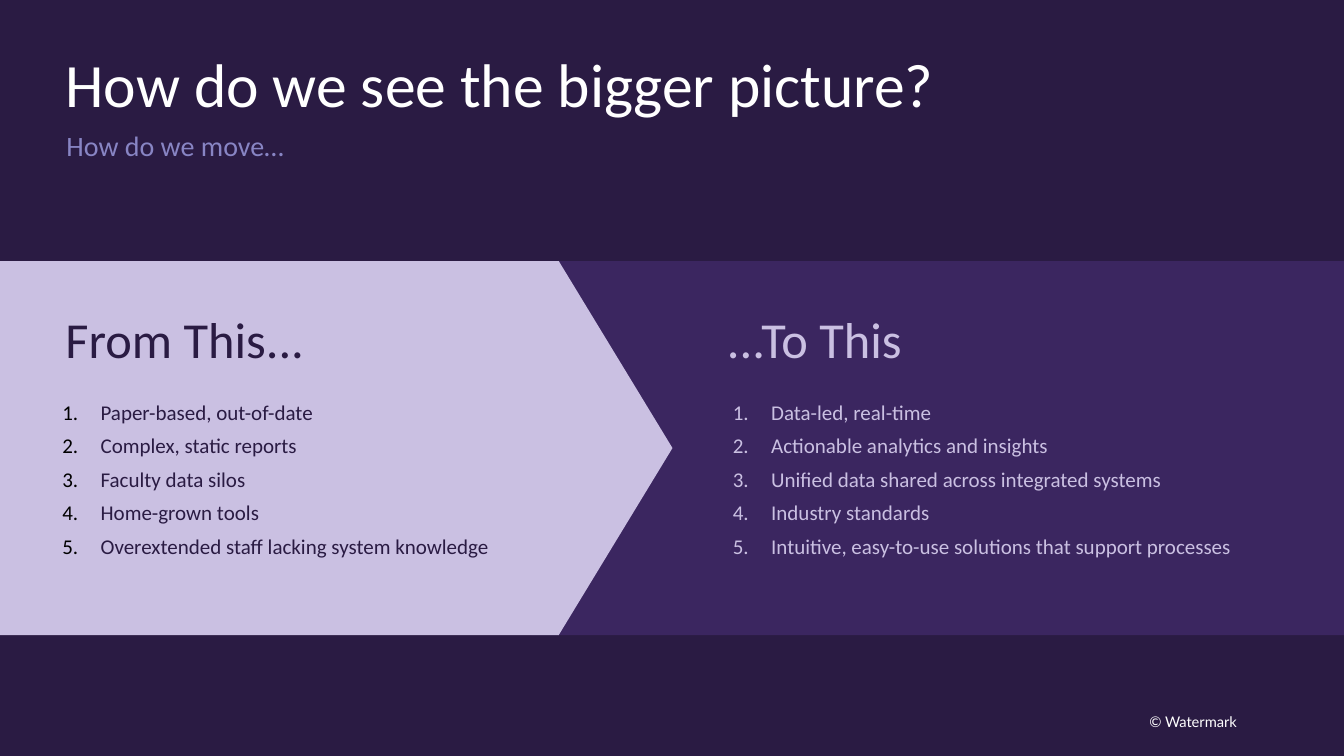
import pptx
import pptx.util
import pptx.dml.color
import pptx.enum.shapes
import pptx.enum.text
import pptx.oxml.ns
from dataclasses import dataclass
from lxml import etree

Inches, Pt = pptx.util.Inches, pptx.util.Pt
SHAPE = pptx.enum.shapes.MSO_SHAPE
ANCHOR = pptx.enum.text.MSO_ANCHOR


@dataclass(frozen=True)
class Theme:
    night: str = "2A1B43"
    violet: str = "3B2660"
    lilac: str = "CAC0E2"
    periwinkle: str = "8885C4"
    white: str = "FFFFFF"
    black: str = "000000"
    font: str = "Calibri"
    footer_font: str = "Lato"
    title: float = 44
    heading: float = 36
    subtitle: float = 20
    body: float = 15
    footer: float = 10.5


def rgb(value):
    return pptx.dml.color.RGBColor.from_string(value)


class SlideBuilder:
    def __init__(self, prs, theme):
        self.theme = theme
        self.s = prs.slides.add_slide(prs.slide_layouts[5])
        self.s.background.fill.solid()
        self.s.background.fill.fore_color.rgb = rgb(theme.night)

    def frame(self, sp, inset_x, inset_y, anchor=ANCHOR.TOP):
        tf = sp.text_frame
        tf.word_wrap = True
        tf.auto_size = pptx.enum.text.MSO_AUTO_SIZE.NONE
        tf.vertical_anchor = anchor
        tf.margin_left = tf.margin_right = Inches(inset_x)
        tf.margin_top = tf.margin_bottom = Inches(inset_y)
        return tf

    def run(self, p, text, size, color, font=None):
        r = p.add_run()
        r.text = text
        r.font.size = Pt(size)
        r.font.name = font or self.theme.font
        r.font.color.rgb = rgb(color)

    def title(self, text, left, top, width, height):
        sp = self.s.shapes.title
        sp.left, sp.top = Inches(left), Inches(top)
        sp.width, sp.height = Inches(width), Inches(height)
        p = self.frame(sp, 0, 0, ANCHOR.MIDDLE).paragraphs[0]
        p.alignment = pptx.enum.text.PP_ALIGN.LEFT
        p.line_spacing = 0.9
        self.run(p, text, self.theme.title, self.theme.white)

    def box(self, left, top, width, height, inset_x=0.1, inset_y=0.05):
        sp = self.s.shapes.add_textbox(
            Inches(left), Inches(top), Inches(width), Inches(height))
        return self.frame(sp, inset_x, inset_y)

    def line(self, tf, text, size, color, font=None, spacing=None):
        p = tf.paragraphs[0]
        p.line_spacing = spacing
        self.run(p, text, size, color, font)

    def band(self, kind, left, width, color):
        sp = self.s.shapes.add_shape(
            kind, Inches(left), Inches(2.59), Inches(width), Inches(3.71))
        sp.shadow.inherit = False
        sp.fill.solid()
        sp.fill.fore_color.rgb = rgb(color)
        sp.line.fill.background()
        return sp

    def numbered(self, tf, items, color, number_color):
        for i, item in enumerate(items):
            p = tf.add_paragraph() if i else tf.paragraphs[0]
            pPr = p._p.get_or_add_pPr()
            pPr.set("marL", str(Inches(0.38)))
            pPr.set("indent", str(-Inches(0.38)))
            if i:
                p.space_before = Pt(6)
            qn = pptx.oxml.ns.qn
            clr = etree.SubElement(pPr, qn("a:buClr"))
            etree.SubElement(clr, qn("a:srgbClr"), val=number_color)
            etree.SubElement(pPr, qn("a:buFont"), typeface="+mj-lt")
            etree.SubElement(pPr, qn("a:buAutoNum"), type="arabicPeriod")
            self.run(p, item, self.theme.body, color)


def main():
    prs = pptx.Presentation()
    prs.slide_width, prs.slide_height = Inches(13.33), Inches(7.5)
    t = Theme()
    b = SlideBuilder(prs, t)

    # Title and subtitle
    b.title("How do we see the bigger picture?", 0.65, 0.62, 11.53, 0.5)
    b.line(b.box(0.56, 1.23, 11.71, 0.44), "How do we move…",
           t.subtitle, t.periwinkle)

    # Band with the arrow pointing from old to new
    b.band(SHAPE.RECTANGLE, 5.27, 8.06, t.violet)
    arrow = b.band(SHAPE.PENTAGON, 0, 6.67, t.lilac)
    arrow.adjustments[0] = 0.304

    # Two columns: heading left, list left, width, list height, colours, text
    columns = [
        (0.52, 0.52, 5.44, 2.04, t.night, t.black, "From This...", [
            "Paper-based, out-of-date",
            "Complex, static reports",
            "Faculty data silos",
            "Home-grown tools",
            "Overextended staff lacking system knowledge",
        ]),
        (7.08, 7.17, 5.79, 2.37, t.lilac, t.lilac, "...To This", [
            "Data-led, real-time",
            "Actionable analytics and insights",
            "Unified data shared across integrated systems",
            "Industry standards",
            "Intuitive, easy-to-use solutions that support processes",
        ]),
    ]
    for head_x, list_x, width, height, color, number_color, head, items in columns:
        b.line(b.box(head_x, 2.84, width, 0.57, 0.13, 0.13), head,
               t.heading, color, spacing=1.15)
        b.numbered(b.box(list_x, 3.91, width, height), items, color, number_color)

    # Footer
    b.line(b.box(11.4, 7.07, 1.25, 0.18, 0, 0), "© Watermark",
           t.footer, t.white, t.footer_font)

    prs.save("out.pptx")


if __name__ == "__main__":
    main()
